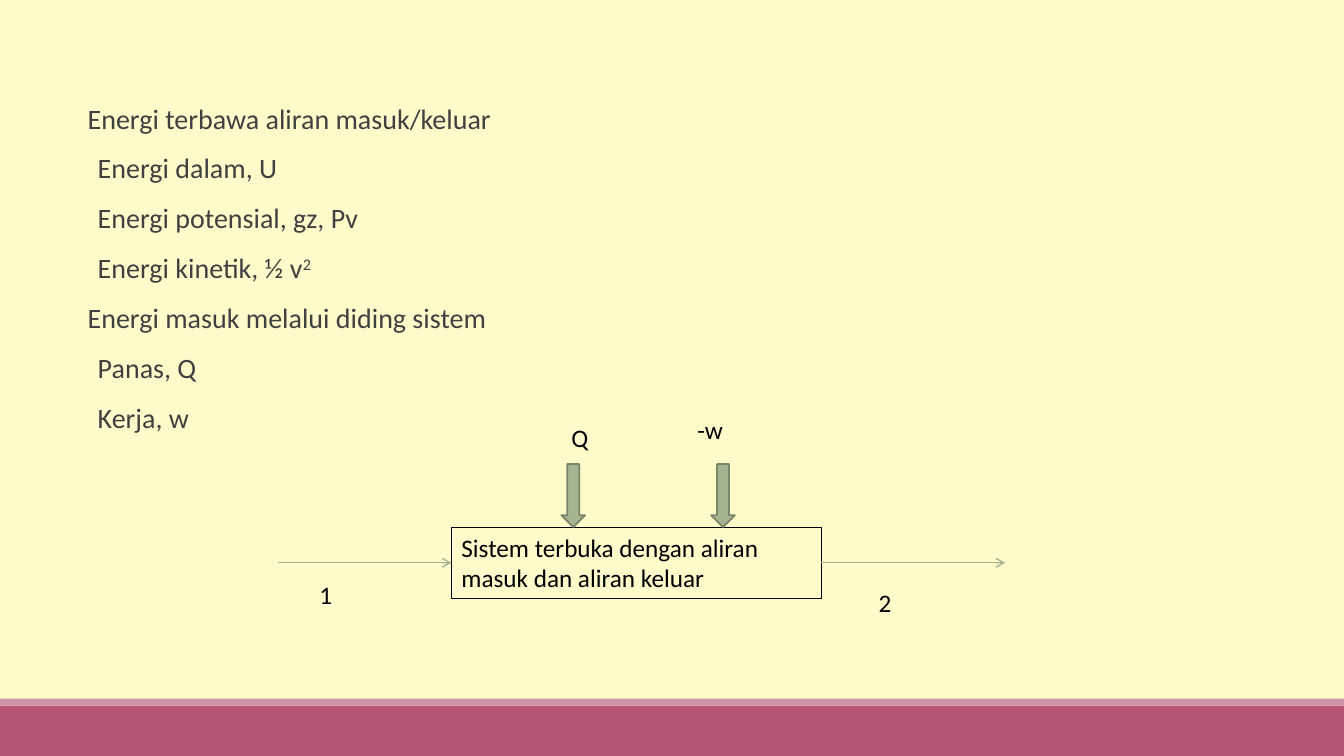
"""Build a slide on the energy carried into and out of an open system."""
import pptx
import pptx.dml.color
import pptx.enum.shapes
import pptx.enum.text
import pptx.oxml
import pptx.oxml.ns
import pptx.util

COLOURS = {"page": "FEFAC9", "band": "B55475", "stripe": "D092A7", "body": "404040",
           "black": "000000", "green": "A5B592", "edge": "7A866C"}
SHAPES = pptx.enum.shapes.MSO_SHAPE
ALIGN_TOP = pptx.enum.text.MSO_ANCHOR.TOP
NO_FIT = pptx.enum.text.MSO_AUTO_SIZE.NONE


def colour(name):
    return pptx.dml.color.RGBColor.from_string(COLOURS[name])


def points(*lengths):
    return [pptx.util.Pt(length) for length in lengths]


def apply(target, values):
    for name, value in values.items():
        setattr(target, name, value)


def add_xml(parent, tag, **attributes):
    child = pptx.oxml.parse_xml(f"<a:{tag} {pptx.oxml.ns.nsdecls('a')}/>")
    for name, value in attributes.items():
        child.set(name, value)
    parent.append(child)
    return child


class SlideBuilder:
    """Hold the style and the current slide."""

    font = "Calibri"

    def __init__(self, deck):
        self.page = deck.slides.add_slide(deck.slide_layouts[1])
        title = self.page.shapes.title.element
        title.getparent().remove(title)
        self.page.background.fill.solid()
        self.page.background.fill.fore_color.rgb = colour("page")

    def span(self, para, text, size, shade):
        span = para.add_run()
        apply(span, {"text": text})
        apply(span.font, {"name": self.font, "size": pptx.util.Pt(size)})
        span.font.color.rgb = colour(shade)
        return span

    def outline(self, box, shade, width):
        box.line.color.rgb = colour(shade)
        box.line.width = pptx.util.Pt(width)

    def shape(self, kind, place, fill=None, edge=None, width=0.75):
        box = self.page.shapes.add_shape(kind, *points(*place))
        box.shadow.inherit = False
        if fill:
            box.fill.solid()
            box.fill.fore_color.rgb = colour(fill)
        else:
            box.fill.background()
        if edge:
            self.outline(box, edge, width)
        else:
            box.line.fill.background()
        return box

    def caption(self, box, text):
        apply(box.text_frame, {"word_wrap": True, "vertical_anchor": ALIGN_TOP})
        para = box.text_frame.paragraphs[0]
        para.alignment = pptx.enum.text.PP_ALIGN.LEFT
        self.span(para, text, 18, "black")

    def label(self, text, place):
        self.caption(self.page.shapes.add_textbox(*points(*place)), text)

    def body(self, place, lines):
        box = self.page.placeholders[1]
        apply(box, dict(zip(("left", "top", "width", "height"), points(*place))))
        frame = box.text_frame
        apply(frame, {"margin_left": 0, "margin_right": 0, "word_wrap": True,
                      "vertical_anchor": ALIGN_TOP, "auto_size": NO_FIT})
        for index, (text, power, is_item) in enumerate(lines):
            para = frame.add_paragraph() if index else frame.paragraphs[0]
            apply(para, {"line_spacing": 0.9, "space_before": pptx.util.Pt(12),
                         "space_after": pptx.util.Pt(2)})
            properties = para._p.get_or_add_pPr()
            properties.set("marL", str(pptx.util.Pt(7.2)))
            properties.set("indent", str(pptx.util.Pt(-7.2)))
            if is_item:
                add_xml(add_xml(properties, "buClr"), "srgbClr", val=COLOURS["green"])
                add_xml(properties, "buChar", char=" ")
            else:
                add_xml(properties, "buNone")
            self.span(para, text, 20, "body")
            if power:
                raised = self.span(para, power, 20, "body")
                raised.font._element.set("baseline", "30000")

    def arrow(self, start, end, begin_at=None, end_at=None):
        straight = pptx.enum.shapes.MSO_CONNECTOR.STRAIGHT
        line = self.page.shapes.add_connector(straight, *points(*start, *end))
        if begin_at:
            line.begin_connect(*begin_at)
        if end_at:
            line.end_connect(*end_at)
        self.outline(line, "green", 1)
        add_xml(line.line._get_or_add_ln(), "tailEnd", type="arrow")
        add_xml(line._element.spPr, "effectLst")


def main():
    deck = pptx.Presentation()
    apply(deck, {"slide_width": pptx.util.Pt(960), "slide_height": pptx.util.Pt(540)})
    slide = SlideBuilder(deck)
    slide.shape(SHAPES.RECTANGLE, (0, 504, 960, 36), "band")
    slide.shape(SHAPES.RECTANGLE, (0, 499, 960, 5), "stripe")
    slide.body((62.6, 71.3, 784, 372), [
        ("Energi terbawa aliran masuk/keluar", "", False),
        ("Energi dalam, U", "", True),
        ("Energi potensial, gz, Pv", "", True),
        ("Energi kinetik, ½ v", "2", True),
        ("Energi masuk melalui diding sistem", "", False),
        ("Panas, Q", "", True),
        ("Kerja, w", "", True),
    ])

    system = slide.shape(SHAPES.RECTANGLE, (322.5, 376.5, 264, 51), edge="black")
    slide.caption(system, "Sistem terbuka dengan aliran masuk dan aliran keluar")
    slide.arrow((198.5, 402), (322.5, 402), end_at=(system, 1))
    slide.arrow((586.5, 402), (718, 402), begin_at=(system, 3))
    for left in (401, 508):
        slide.shape(SHAPES.DOWN_ARROW, (left, 331.5, 17, 45), "green", "edge", 1.25)
    for text, place in (("1", (221, 410.5, 68, 29)), ("2", (620.5, 416, 56, 29)),
                        ("Q", (401, 298, 27, 29)), ("-w", (491, 292.5, 50, 29))):
        slide.label(text, place)
    deck.save("out.pptx")


if __name__ == "__main__":
    main()
